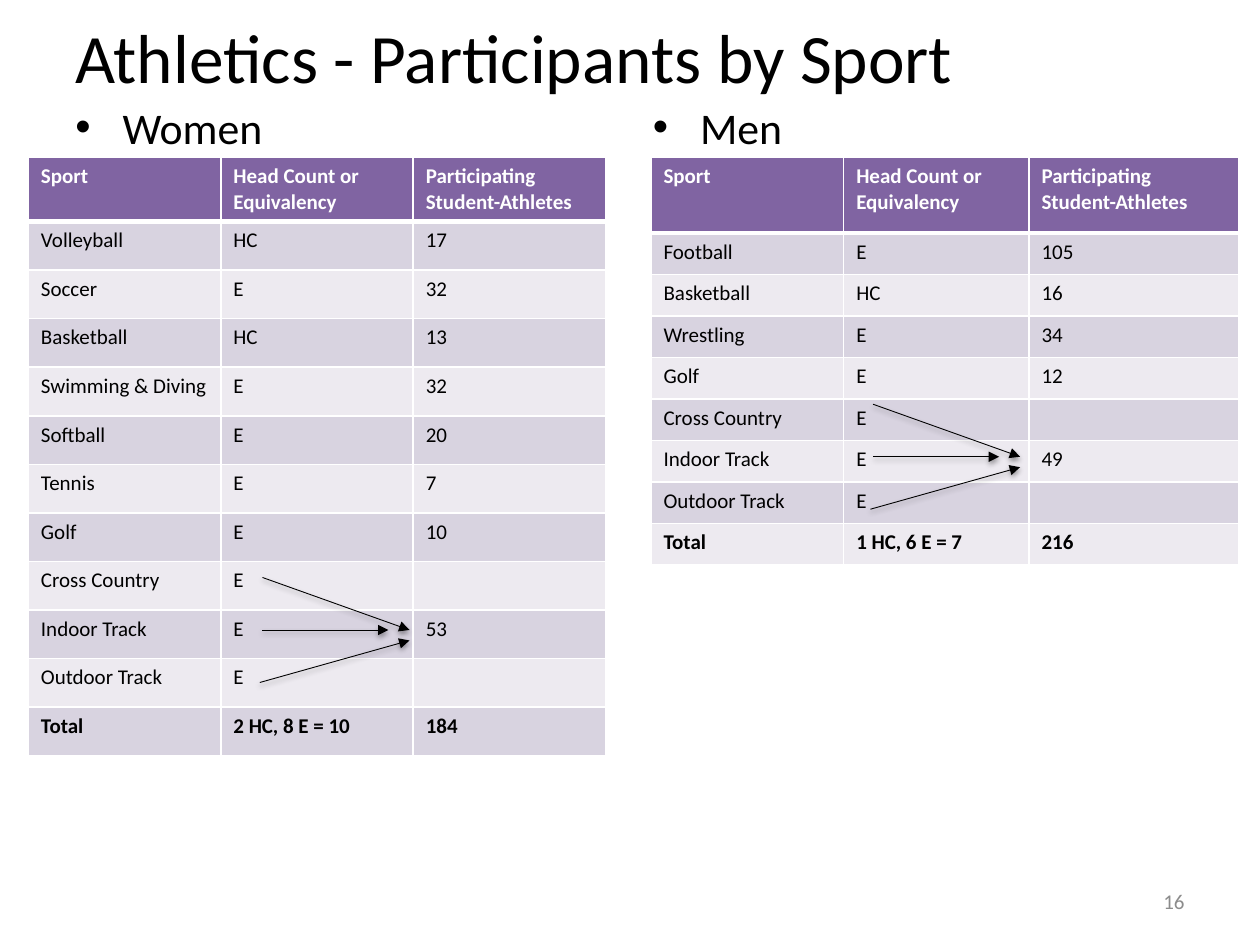
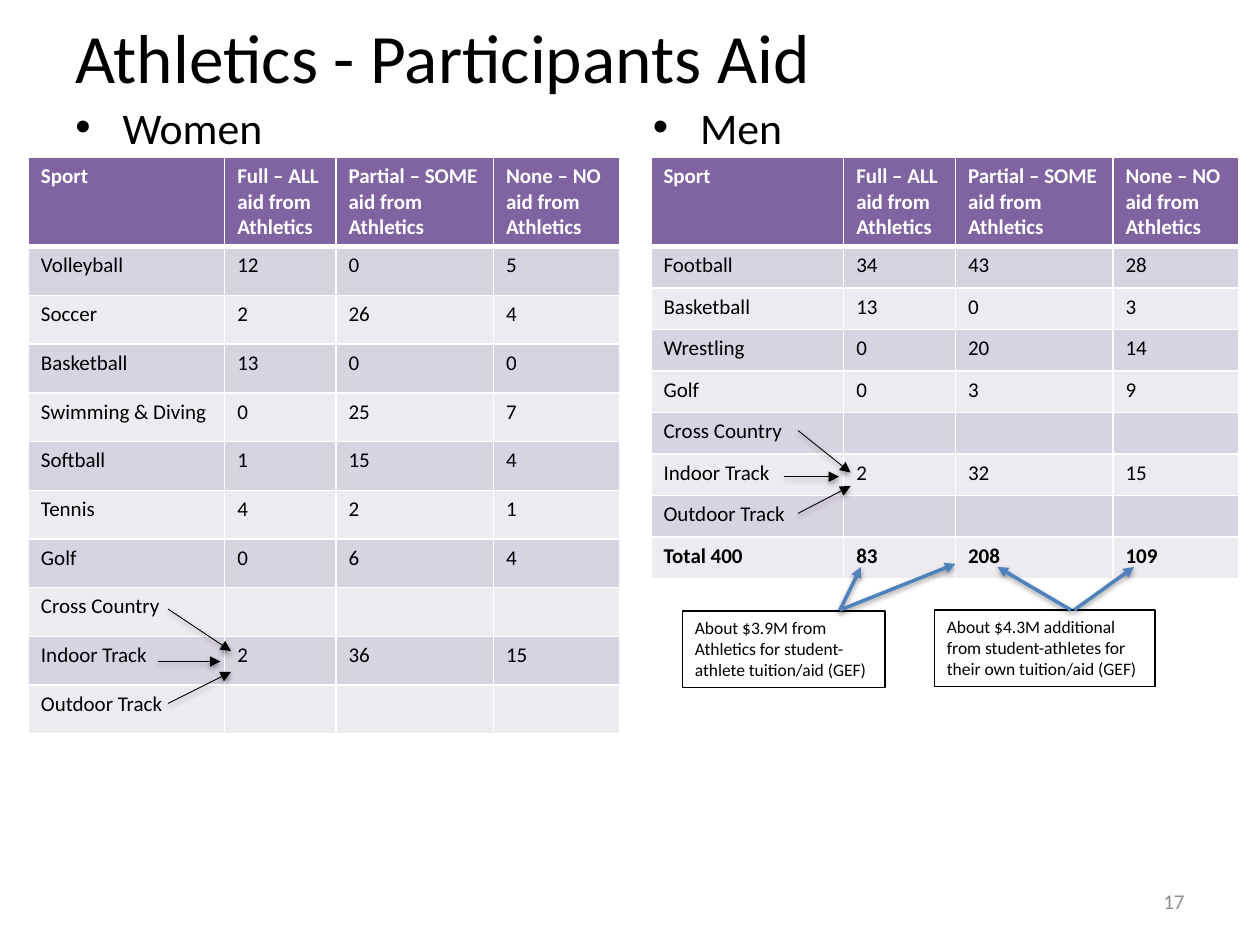
from dataclasses import dataclass
from typing import NamedTuple

from lxml import etree
from pptx import Presentation
from pptx.dml.color import RGBColor
from pptx.enum.shapes import MSO_CONNECTOR, MSO_SHAPE
from pptx.enum.text import MSO_ANCHOR, PP_ALIGN
from pptx.oxml.ns import qn
from pptx.util import Inches, Pt

STRAIGHT = MSO_CONNECTOR.STRAIGHT
RECTANGLE = MSO_SHAPE.RECTANGLE
TOP, MIDDLE = MSO_ANCHOR.TOP, MSO_ANCHOR.MIDDLE
LEFT, RIGHT = PP_ALIGN.LEFT, PP_ALIGN.RIGHT

SLIDE_WIDTH, SLIDE_HEIGHT = Inches(10), Inches(7.5)
GRID_COLUMNS = 120
UNIT = SLIDE_WIDTH / GRID_COLUMNS


@dataclass(frozen=True)
class Theme:
    font: str = "Calibri"
    text: str = "000000"
    muted: str = "8C8C8C"
    white: str = "FFFFFF"
    header: str = "8064A2"
    bands: tuple[str, str] = ("EDEAF0", "D8D3E0")
    accent: str = "4F81BD"
    title_size: float = 39.6
    heading_size: float = 25
    body_size: float = 12
    callout_size: float = 10
    border: float = 1
    header_border: float = 3


THEME = Theme()


class Area(NamedTuple):
    left: float
    top: float
    width: float
    height: float


class Arrow(NamedTuple):
    start_x: float
    start_y: float
    end_x: float
    end_y: float


class Callout(NamedTuple):
    area: Area
    text: str


class SportTable(NamedTuple):
    left: float
    column_widths: tuple[float, ...]
    header_height: float
    height: float
    header: tuple[str, ...]
    rows: tuple[tuple[str, ...], ...]
    fan: tuple[Arrow, ...]


class SlideContent(NamedTuple):
    title: str
    number: str
    tables: tuple[SportTable, ...]
    callouts: tuple[Callout, ...] = ()
    callout_arrows: tuple[Arrow, ...] = ()


TITLE_AREA = Area(6, 0.6, 108, 9.4)
NUMBER_AREA = Area(86, 83.4, 28, 4.8)
HEADINGS = (("Women", Area(6, 9, 53, 61)), ("Men", Area(61, 9, 53, 61)))
TABLE_TOP = 15
WOMEN_LEFT, MEN_LEFT = 2.7, 62
BULLET_INDENT = 4.5

COUNT_HEADER = ("Sport", "Head Count or Equivalency", "Participating Student-Athletes")
AID_HEADER = ("Sport", "Full – ALL aid from Athletics",
              "Partial – SOME aid from Athletics", "None – NO aid from Athletics")

COUNT_FAN = (Arrow(25, 55, 39, 60), Arrow(24.75, 65, 39, 61), Arrow(25, 60, 37, 60))
MEN_FAN_SHIFT = (58.15, -16.5)


def shift(arrow: Arrow, right: float, down: float) -> Arrow:
    return Arrow(arrow.start_x + right, arrow.start_y + down,
                 arrow.end_x + right, arrow.end_y + down)


SLIDES = (
    SlideContent("Athletics - Participants by Sport", "16", (
        SportTable(MEN_LEFT, (18.35, 17.65, 20), 7.2, 38.8, COUNT_HEADER, (
            ("Football", "E", "105"),
            ("Basketball", "HC", "16"),
            ("Wrestling", "E", "34"),
            ("Golf", "E", "12"),
            ("Cross Country", "E", ""),
            ("Indoor Track", "E", "49"),
            ("Outdoor Track", "E", ""),
            ("Total", "1 HC, 6 E = 7", "216"),
        ), tuple(shift(arrow, *MEN_FAN_SHIFT) for arrow in COUNT_FAN)),
        SportTable(WOMEN_LEFT, (18.33,) * 3, 6.1, 57, COUNT_HEADER, (
            ("Volleyball", "HC", "17"),
            ("Soccer", "E", "32"),
            ("Basketball", "HC", "13"),
            ("Swimming & Diving", "E", "32"),
            ("Softball", "E", "20"),
            ("Tennis", "E", "7"),
            ("Golf", "E", "10"),
            ("Cross Country", "E", ""),
            ("Indoor Track", "E", "53"),
            ("Outdoor Track", "E", ""),
            ("Total", "2 HC, 8 E = 10", "184"),
        ), COUNT_FAN),
    )),
    SlideContent("Athletics - Participants Aid", "17", (
        SportTable(MEN_LEFT, (18.35, 10.65, 15, 12), 8.5, 40.1, AID_HEADER, (
            ("Football", "34", "43", "28"),
            ("Basketball", "13", "0", "3"),
            ("Wrestling", "0", "20", "14"),
            ("Golf", "0", "3", "9"),
            ("Cross Country", "", "", ""),
            ("Indoor Track", "2", "32", "15"),
            ("Outdoor Track", "", "", ""),
            ("Total 400", "83", "208", "109"),
        ), (Arrow(76, 41, 81, 45), Arrow(76, 48.9, 81, 46.3), Arrow(74.7, 45.4, 79.9, 45.4))),
        SportTable(WOMEN_LEFT, (18.7, 10.6, 15, 12), 8.5, 54.9, AID_HEADER, (
            ("Volleyball", "12", "0", "5"),
            ("Soccer", "2", "26", "4"),
            ("Basketball", "13", "0", "0"),
            ("Swimming & Diving", "0", "25", "7"),
            ("Softball", "1", "15", "4"),
            ("Tennis", "4", "2", "1"),
            ("Golf", "0", "6", "4"),
            ("Cross Country", "", "", ""),
            ("Indoor Track", "2", "36", "15"),
            ("Outdoor Track", "", "", ""),
        ), (Arrow(16, 58, 22, 62), Arrow(16, 67, 22, 64), Arrow(15, 63, 21, 63))),
    ), (
        Callout(Area(65, 58.2, 19.3, 7.3),
                "About $3.9M from Athletics for student-athlete tuition/aid (GEF)"),
        Callout(Area(89, 58.1, 21, 7.3),
                "About $4.3M additional from student-athletes for their own tuition/aid (GEF)"),
    ), (
        Arrow(80, 58.1, 82, 54), Arrow(80, 58.1, 91, 53.7),
        Arrow(102, 58.1, 95, 54), Arrow(102.3, 58.1, 108, 54),
    )),
)


def grid(units: float) -> int:
    return round(units * UNIT)


def place(area: Area) -> tuple[int, ...]:
    return tuple(grid(value) for value in area)


def write_text(frame, text: str, *, size: float, color: str = THEME.text, bold: bool = False,
               align=LEFT, anchor=TOP, bullet: bool = False) -> None:
    frame.word_wrap = True
    frame.vertical_anchor = anchor
    paragraph = frame.paragraphs[0]
    paragraph.alignment = align
    if bullet:
        properties = paragraph._p.get_or_add_pPr()
        properties.set("marL", str(grid(BULLET_INDENT)))
        properties.set("indent", str(-grid(BULLET_INDENT)))
        etree.SubElement(properties, qn("a:buFont"), typeface="Arial")
        etree.SubElement(properties, qn("a:buChar"), char="•")
    if not text:
        etree.SubElement(paragraph._p, qn("a:endParaRPr"), sz=str(round(size * 100)))
        return
    run = paragraph.add_run()
    run.text = text
    run.font.name = THEME.font
    run.font.size = Pt(size)
    run.font.bold = bold
    run.font.color.rgb = RGBColor.from_string(color)


def add_label(slide, area: Area, text: str, **text_format) -> None:
    write_text(slide.shapes.add_textbox(*place(area)).text_frame, text, **text_format)


def add_color(parent, color: str):
    fill = etree.SubElement(parent, qn("a:solidFill"))
    return etree.SubElement(fill, qn("a:srgbClr"), val=color)


def set_borders(cell, top: float, bottom: float) -> None:
    properties = cell._tc.get_or_add_tcPr()
    widths = {"L": THEME.border, "R": THEME.border, "T": top, "B": bottom}
    for side, width in widths.items():
        border = etree.SubElement(properties, qn(f"a:ln{side}"), w=str(Pt(width)))
        add_color(border, THEME.white)


def add_sport_table(slide, content: SportTable) -> None:
    rows = (content.header, *content.rows)
    area = Area(content.left, TABLE_TOP, sum(content.column_widths), content.height)
    table = slide.shapes.add_table(len(rows), len(content.header), *place(area)).table
    table.horz_banding = False
    for column, width in zip(table.columns, content.column_widths):
        column.width = grid(width)
    body_height = (content.height - content.header_height) / len(content.rows)
    for row_index, values in enumerate(rows):
        is_header = row_index == 0
        table.rows[row_index].height = grid(content.header_height if is_header else body_height)
        for column_index, value in enumerate(values):
            cell = table.cell(row_index, column_index)
            set_borders(cell, THEME.header_border if row_index == 1 else THEME.border,
                        THEME.header_border if is_header else THEME.border)
            cell.fill.solid()
            fill = THEME.header if is_header else THEME.bands[row_index % 2]
            cell.fill.fore_color.rgb = RGBColor.from_string(fill)
            write_text(cell.text_frame, value, size=THEME.body_size,
                       color=THEME.white if is_header else THEME.text,
                       bold=is_header or values[0].startswith("Total"))


def add_arrow(shapes, arrow: Arrow, color: str, width: float) -> None:
    connector = shapes.add_connector(STRAIGHT, *(grid(value) for value in arrow))
    connector.line.color.rgb = RGBColor.from_string(color)
    connector.line.width = Pt(width)
    properties = connector._element.spPr
    etree.SubElement(properties.find(qn("a:ln")), qn("a:tailEnd"), type="triangle")
    effects = etree.SubElement(properties, qn("a:effectLst"))
    shadow = etree.SubElement(effects, qn("a:outerShdw"), blurRad=str(Pt(3.1)),
                              dist=str(Pt(1.6)), dir="5400000", rotWithShape="0")
    shade = etree.SubElement(shadow, qn("a:srgbClr"), val=THEME.text)
    etree.SubElement(shade, qn("a:alpha"), val="38000")


def add_callout(slide, callout: Callout) -> None:
    shape = slide.shapes.add_shape(RECTANGLE, *place(callout.area))
    shape.shadow.inherit = False
    shape.fill.background()
    shape.line.color.rgb = RGBColor.from_string(THEME.text)
    shape.line.width = Pt(0.75)
    write_text(shape.text_frame, callout.text, size=THEME.callout_size)


def build_slide(presentation, content: SlideContent) -> None:
    slide = presentation.slides.add_slide(presentation.slide_layouts[6])
    add_label(slide, TITLE_AREA, content.title, size=THEME.title_size, anchor=MIDDLE)
    for heading, area in HEADINGS:
        add_label(slide, area, heading, size=THEME.heading_size, bullet=True)
    add_label(slide, NUMBER_AREA, content.number, size=THEME.body_size,
              color=THEME.muted, align=RIGHT, anchor=MIDDLE)
    for table in content.tables:
        add_sport_table(slide, table)
    for callout in content.callouts:
        add_callout(slide, callout)
    for arrow in content.callout_arrows:
        add_arrow(slide.shapes, arrow, THEME.accent, 2)
    for table in content.tables:
        group = slide.shapes.add_group_shape()
        for arrow in table.fan:
            add_arrow(group.shapes, arrow, THEME.text, 0.5)


def main() -> None:
    presentation = Presentation()
    presentation.slide_width, presentation.slide_height = SLIDE_WIDTH, SLIDE_HEIGHT
    for content in SLIDES:
        build_slide(presentation, content)
    presentation.save("out.pptx")


if __name__ == "__main__":
    main()
